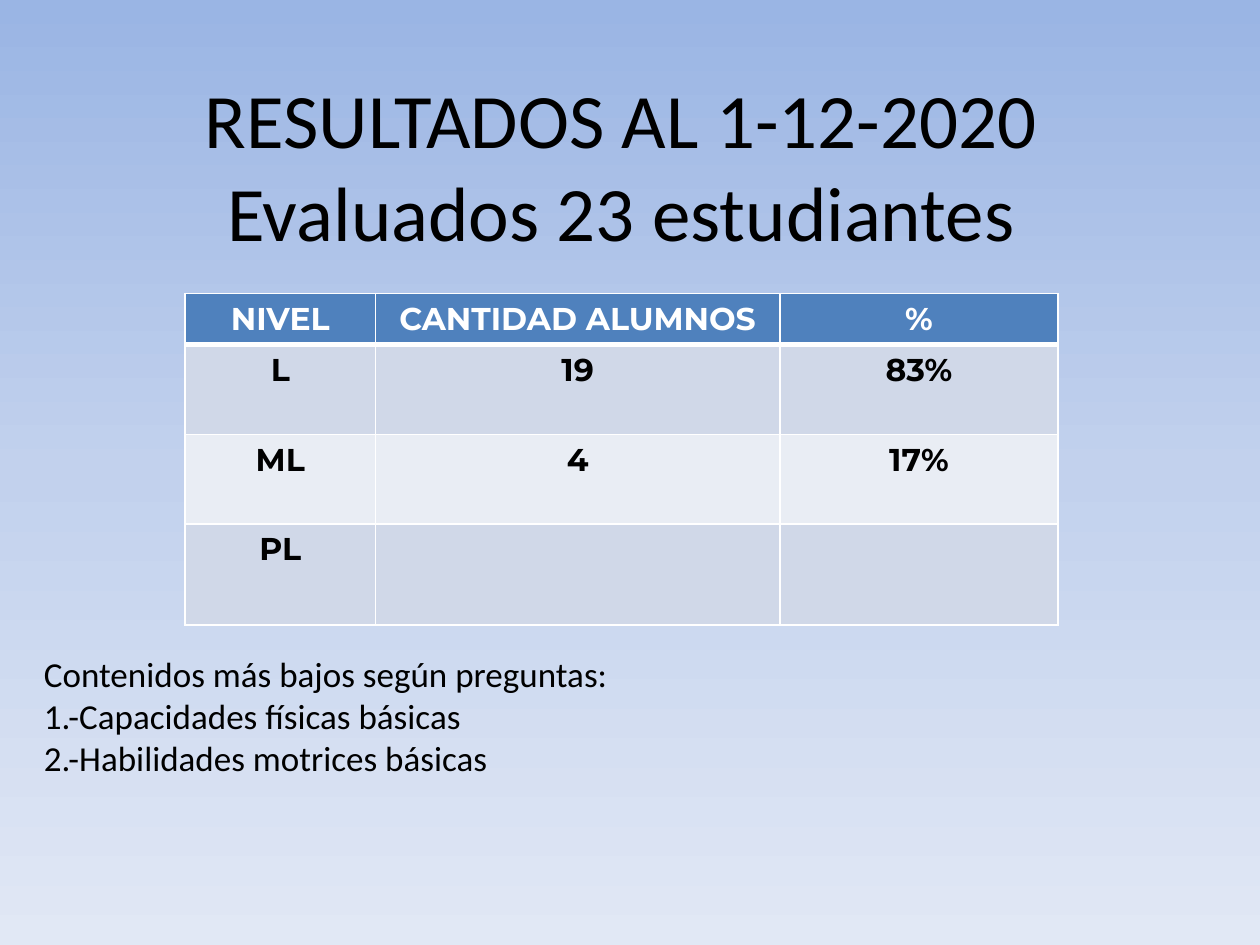
from copy import deepcopy

from lxml.etree import SubElement
from pptx import Presentation
from pptx.dml.color import RGBColor
from pptx.enum.text import MSO_ANCHOR, PP_ALIGN
from pptx.oxml.ns import qn
from pptx.util import Pt

TITLE = ["RESULTADOS AL 1-12-2020", "Evaluados 23 estudiantes"]
ROWS = [
    ("NIVEL", "CANTIDAD ALUMNOS", "%"),
    ("L", "19", "83%"),
    ("ML", "4", "17%"),
    ("PL", "", ""),
]
NOTES = [
    "Contenidos más bajos según preguntas:",
    "1.-Capacidades físicas básicas",
    "2.-Habilidades motrices básicas",
]
COL_WIDTHS = [108.75, 231.1, 159.1]
ROW_HEIGHTS = [29.2, 51.2, 51.2, 57.8]
THEME = {
    "text": "000000", "white": "FFFFFF", "header": "4F81BD",
    "bands": ["E9EDF4", "D0D8E8"],
    "background": [(0, "9AB5E4"), (0.5, "C2D1ED"), (1, "E1E8F5")],
    "body_font": "Calibri", "table_font": "Montserrat",
    "title_size": 44, "table_size": 18, "notes_size": 20,
}


def add_run(p, text, font, size, color, bold=False):
    r = p.add_run()
    r.text = text
    r.font.name = font
    r.font.size = Pt(size)
    r.font.bold = bold
    r.font.color.rgb = RGBColor.from_string(color)


def add_text_box(s, box, anchor):
    tf = s.shapes.add_textbox(*map(Pt, box)).text_frame
    tf.word_wrap = True
    tf.vertical_anchor = anchor
    return tf


def paint_background(s):
    fill = s.background.fill
    fill.gradient()
    fill.gradient_angle = 270
    stops = s._element.find(".//" + qn("a:gsLst"))
    stops.insert(1, deepcopy(stops[0]))
    for stop, (position, color) in zip(fill.gradient_stops, THEME["background"]):
        stop.position = position
        stop.color.rgb = RGBColor.from_string(color)


def set_borders(cell, widths):
    tcPr = cell._tc.get_or_add_tcPr()
    for side, width in widths.items():
        ln = SubElement(tcPr, qn(f"a:ln{side}"), w=str(Pt(width)))
        SubElement(SubElement(ln, qn("a:solidFill")), qn("a:srgbClr"), val=THEME["white"])


def add_title(s):
    p = add_text_box(s, (31, 31.7, 648, 124.5), MSO_ANCHOR.MIDDLE).paragraphs[0]
    p.alignment = PP_ALIGN.CENTER
    for i, line in enumerate(TITLE):
        if i:
            p.add_line_break()
        add_run(p, line, THEME["body_font"], THEME["title_size"], THEME["text"])


def add_results(s):
    box = (105.8, 167.8, sum(COL_WIDTHS), sum(ROW_HEIGHTS))
    table = s.shapes.add_table(len(ROWS), len(COL_WIDTHS), *map(Pt, box)).table
    for column, width in zip(table.columns, COL_WIDTHS):
        column.width = Pt(width)
    for i, (row, height) in enumerate(zip(ROWS, ROW_HEIGHTS)):
        table.rows[i].height = Pt(height)
        fill = THEME["bands"][i % 2] if i else THEME["header"]
        color = THEME["text"] if i else THEME["white"]
        for j, text in enumerate(row):
            cell = table.cell(i, j)
            set_borders(cell, {"L": 1, "R": 1, "T": 3 if i == 1 else 1, "B": 1 if i else 3})
            cell.fill.solid()
            cell.fill.fore_color.rgb = RGBColor.from_string(fill)
            p = cell.text_frame.paragraphs[0]
            p.alignment = PP_ALIGN.CENTER
            if text:
                add_run(p, text, THEME["table_font"], THEME["table_size"], color, True)


def add_notes(s):
    tf = add_text_box(s, (18, 369.4, 674.6, 80), MSO_ANCHOR.TOP)
    for i, line in enumerate(NOTES):
        p = tf.add_paragraph() if i else tf.paragraphs[0]
        add_run(p, line, THEME["body_font"], THEME["notes_size"], THEME["text"])


def main():
    """Build the slide of evaluation results by level."""
    prs = Presentation()
    prs.slide_width, prs.slide_height = Pt(720), Pt(540)
    s = prs.slides.add_slide(prs.slide_layouts[6])
    paint_background(s)
    add_title(s)
    add_results(s)
    add_notes(s)
    prs.save("out.pptx")


if __name__ == "__main__":
    main()
